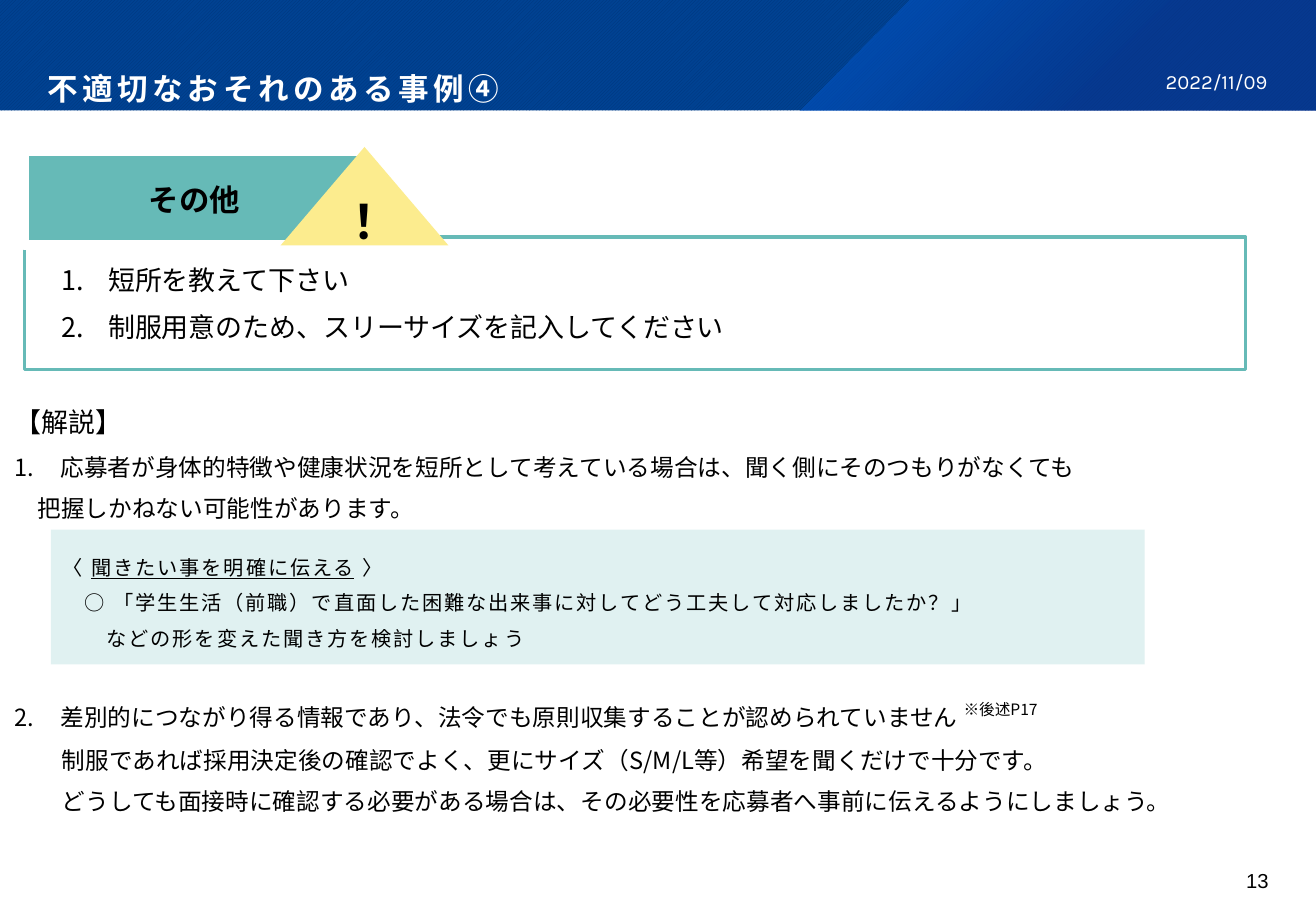
from lxml import etree
from pptx import Presentation
from pptx.dml.color import RGBColor
from pptx.enum.dml import MSO_PATTERN
from pptx.enum.shapes import MSO_SHAPE
from pptx.enum.text import MSO_ANCHOR, PP_ALIGN
from pptx.oxml import parse_xml
from pptx.oxml.ns import qn
from pptx.util import Inches, Pt

COLORS = {
    "white": "FFFFFF", "black": "000000", "teal": "66BAB7", "mint": "E0F1F1",
    "yellow": "FCEC8E", "stripe": "003579", "banner": "004292",
    "glow": "0064DF", "navy": "0C338E",
}
BODY_FONT = "Noto Sans CJK JP"
DEFAULT_INSETS = (0.1, 0.05, 0.1, 0.05)
NO_INSETS = (0, 0, 0, 0)


def rgb(name):
    return RGBColor.from_string(COLORS[name])


class SlideBuilder:
    def __init__(self, slide):
        self.slide = slide

    def shape(self, kind, box, fill=None, line=None, line_width=1):
        shape = self.slide.shapes.add_shape(kind, *map(Inches, box))
        self.paint(shape, fill, line, line_width)
        return shape

    def paint(self, shape, fill=None, line=None, line_width=1):
        shape.shadow.inherit = False
        if fill:
            shape.fill.solid()
            shape.fill.fore_color.rgb = rgb(fill)
        else:
            shape.fill.background()
        if line:
            shape.line.color.rgb = rgb(line)
            shape.line.width = Pt(line_width)
        else:
            shape.line.fill.background()

    def banner(self, box):
        shape = self.shape(MSO_SHAPE.RECTANGLE, box)
        shape.fill.patterned()
        shape.fill.pattern = MSO_PATTERN.DARK_UPWARD_DIAGONAL
        shape.fill.fore_color.rgb = rgb("stripe")
        shape.fill.back_color.rgb = rgb("banner")

    def glowing_panel(self, points):
        """Draw a closed outline with a translucent radial gradient."""
        corners = [(Inches(x), Inches(y)) for x, y in points]
        builder = self.slide.shapes.build_freeform(*corners[0])
        builder.add_line_segments(corners[1:], close=True)
        shape = builder.convert_to_shape()
        self.paint(shape)
        stops = "".join(
            f'<a:gs pos="{position}"><a:srgbClr val="{COLORS[color]}">'
            f'<a:alpha val="{alpha}"/></a:srgbClr></a:gs>'
            for position, color, alpha in ((0, "glow", 50000), (62000, "navy", 55000))
        )
        gradient = parse_xml(
            '<a:gradFill xmlns:a="http://schemas.openxmlformats.org/drawingml/2006/main">'
            f'<a:gsLst>{stops}</a:gsLst><a:path path="circle">'
            '<a:fillToRect r="100000" b="100000"/></a:path></a:gradFill>'
        )
        properties = shape.element.spPr
        properties.replace(properties.find(qn("a:noFill")), gradient)

    def text_box(self, box, paragraphs, **style):
        shape = self.slide.shapes.add_textbox(*map(Inches, box))
        self.set_text(shape, paragraphs, **style)

    def set_text(self, shape, paragraphs, size, font=BODY_FONT, color="black", bold=False,
                 spacing=0, align=PP_ALIGN.LEFT, anchor=MSO_ANCHOR.TOP,
                 insets=DEFAULT_INSETS, line_spacing=1.0, after=0):
        """Set paragraphs given as (text, indent, list number) tuples."""
        frame = shape.text_frame
        frame.word_wrap = True
        frame.vertical_anchor = anchor
        (frame.margin_left, frame.margin_top,
         frame.margin_right, frame.margin_bottom) = map(Inches, insets)
        for index, (text, indent, number) in enumerate(paragraphs):
            paragraph = frame.add_paragraph() if index else frame.paragraphs[0]
            paragraph.alignment = align
            paragraph.line_spacing = line_spacing
            paragraph.space_after = Pt(after)
            self.indent(paragraph, indent, number)
            parts = [text] if isinstance(text, str) else text
            for part in parts:
                content, extra = (part, {}) if isinstance(part, str) else part
                run = paragraph.add_run()
                run.text = content
                run.font.size = Pt(extra.get("size", size))
                run.font.name = font
                run.font.bold = bold
                run.font.underline = extra.get("underline", False)
                run.font.color.rgb = rgb(color)
                properties = run.font._element
                etree.SubElement(properties, qn("a:ea")).set("typeface", BODY_FONT)
                if spacing:
                    properties.set("spc", str(round(spacing * 100)))
                if "raised" in extra:
                    properties.set("baseline", str(extra["raised"] * 1000))

    def indent(self, paragraph, indent, number):
        properties = paragraph._p.get_or_add_pPr()
        properties.set("marL", str(Inches(indent)))
        if number:
            properties.set("indent", str(-Inches(indent)))
            bullet = etree.SubElement(properties, qn("a:buAutoNum"))
            bullet.set("type", "arabicPeriod")
            if number > 1:
                bullet.set("startAt", str(number))


def main():
    presentation = Presentation()
    presentation.slide_width = Inches(10.83)
    presentation.slide_height = Inches(7.5)
    builder = SlideBuilder(presentation.slides.add_slide(presentation.slide_layouts[6]))

    header = (0, 0, 10.83, 0.91)
    builder.banner(header)
    builder.glowing_panel([(7.49, 0), (10.83, 0), (10.83, 0.91), (6.58, 0.91)])
    builder.text_box(header, [("不適切なおそれのある事例④", 0, None)], size=18.1,
                     font="Karla", color="white", bold=True, spacing=2.7,
                     anchor=MSO_ANCHOR.BOTTOM, insets=(0.39, 0.36, 0.36, 0.14),
                     line_spacing=0.9)

    questions = builder.shape(MSO_SHAPE.RECTANGLE, (0.2, 1.95, 10.05, 1.09),
                              line="teal", line_width=2)
    # Consecutive items share one list, so both start from 1.
    builder.set_text(questions, [
        ("短所を教えて下さい", 0.38, 1),
        ("制服用意のため、スリーサイズを記入してください", 0.38, 1),
    ], size=16, insets=(0.31, 0.2, 0.16, 0.2), line_spacing=Pt(20.8), after=7)

    category = builder.shape(MSO_SHAPE.ROUNDED_RECTANGLE, (0.2, 1.24, 2.8, 0.78),
                             fill="teal", line="white", line_width=6)
    category.adjustments[0] = 0
    builder.set_text(category, [("その他", 0, None)], size=18, bold=True,
                     align=PP_ALIGN.CENTER, anchor=MSO_ANCHOR.MIDDLE, line_spacing=1.1)

    builder.text_box((0.02, 3.27, 10.11, 0.4), [("【解説】", 0, None)],
                     size=16, line_spacing=Pt(20.8))
    explanations = (
        (3.65, 0.7, [
            ("応募者が身体的特徴や健康状況を短所として考えている場合は、聞く側にそのつもりがなくても",
             0.38, 1),
            ("把握しかねない可能性があります。", 0.19, None),
        ]),
        (5.72, 1.07, [
            (["差別的につながり得る情報であり、法令でも原則収集することが認められていません ",
              ("※後述P17", {"size": 16, "raised": 42})], 0.38, 2),
            ("制服であれば採用決定後の確認でよく、更にサイズ（S/M/L等）希望を聞くだけで十分です。",
             0.39, None),
            ("どうしても面接時に確認する必要がある場合は、その必要性を応募者へ事前に伝えるようにしましょう。",
             0.39, None),
        ]),
    )
    for top, height, paragraphs in explanations:
        builder.text_box((0.02, top, 10.7, height), paragraphs,
                         size=14, line_spacing=Pt(18.7), after=6)

    advice = builder.shape(MSO_SHAPE.RECTANGLE, (0.42, 4.36, 9, 1.11), fill="mint")
    builder.set_text(advice, [
        (["〈 ", ("聞きたい事を明確に伝える", {"underline": True}), " 〉"], 0, None),
        ("○ 「学生生活（前職）で直面した困難な出来事に対してどう工夫して対応しましたか？」",
         0.18, None),
        ("などの形を変えた聞き方を検討しましょう", 0.36, None),
    ], size=12, spacing=1.1, anchor=MSO_ANCHOR.MIDDLE, line_spacing=Pt(21))

    warning = builder.shape(MSO_SHAPE.ISOSCELES_TRIANGLE, (2.31, 1.21, 1.38, 0.81),
                            fill="yellow")
    builder.set_text(warning, [("！", 0, None)], size=28, font="Karla", bold=True,
                     align=PP_ALIGN.CENTER, anchor=MSO_ANCHOR.MIDDLE)

    builder.text_box((7.99, 0.47, 2.44, 0.4), [("2022/11/09", 0, None)], size=12,
                     font="Karla", color="white", align=PP_ALIGN.RIGHT,
                     anchor=MSO_ANCHOR.MIDDLE, insets=NO_INSETS)
    builder.text_box((9.75, 7.15, 0.69, 0.3), [("13", 0, None)], size=12,
                     font="Arial", align=PP_ALIGN.RIGHT, insets=NO_INSETS)

    presentation.save("out.pptx")


if __name__ == "__main__":
    main()
